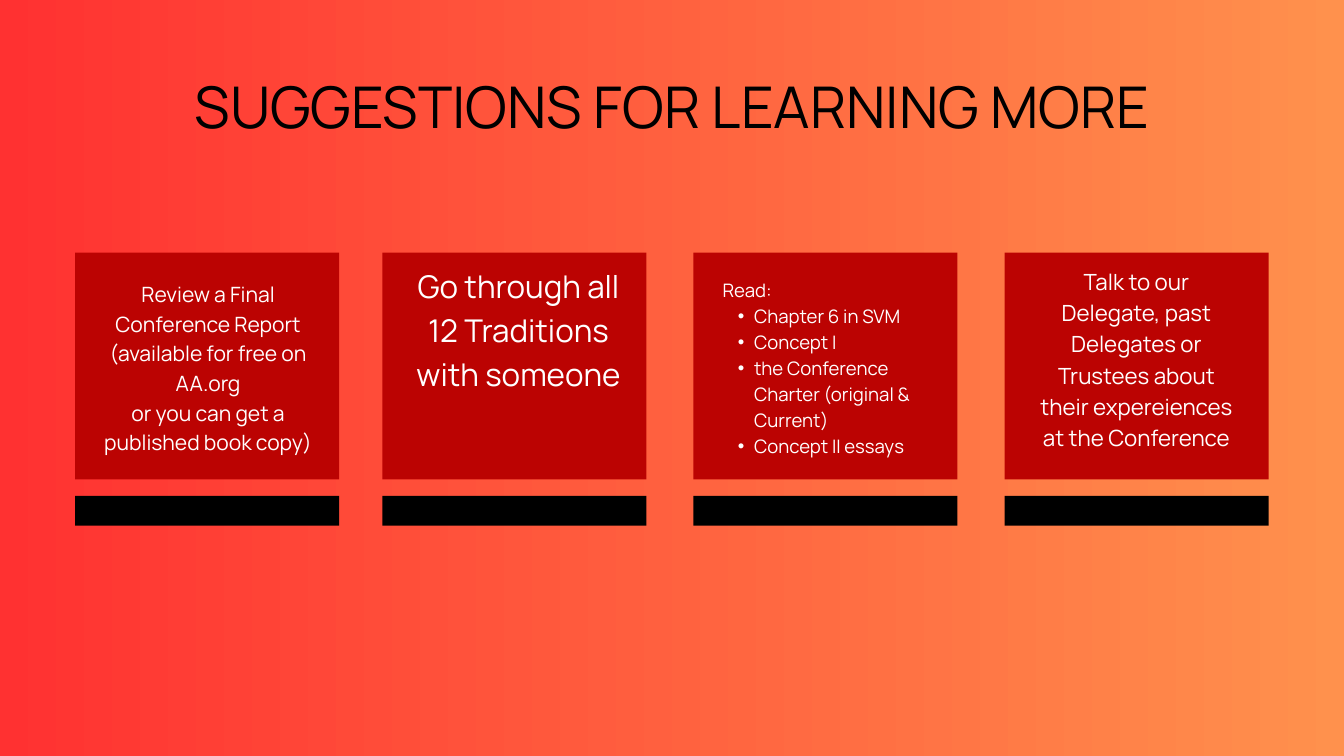
from pptx import Presentation
from pptx.dml.color import RGBColor
from pptx.enum.shapes import MSO_SHAPE as Shape
from pptx.enum.text import MSO_ANCHOR as Anchor, MSO_AUTO_SIZE as AutoSize, PP_ALIGN as Align
from pptx.oxml.ns import qn
from pptx.util import Cm, Pt
from lxml import etree


def color(hex_string):
    return RGBColor.from_string(hex_string)


def write(shape, lines, size, spacing, hex_string, align=Align.CENTER):
    frame = shape.text_frame
    frame.text = "\n".join(lines)
    frame.word_wrap = True
    frame.auto_size = AutoSize.NONE
    frame.vertical_anchor = Anchor.TOP
    frame.margin_left = frame.margin_right = frame.margin_top = frame.margin_bottom = 0
    for paragraph in frame.paragraphs:
        paragraph.alignment = align
        paragraph.line_spacing = Pt(spacing)
        paragraph.space_before = Pt(0)
        paragraph.font.name = "Manrope"
        paragraph.font.size = Pt(size)
        paragraph.font.color.rgb = color(hex_string)


presentation = Presentation()
presentation.slide_width = Cm(50.8)
presentation.slide_height = Cm(28.58)
slide = presentation.slides.add_slide(presentation.slide_layouts[1])
title, reading_list = slide.placeholders

# Background, red to orange from left to right
background = slide.background.fill
background.gradient()
background.gradient_angle = 0
for stop, hex_string in zip(background.gradient_stops, ("FF3131", "FF914D")):
    stop.color.rgb = color(hex_string)

# Title
title.left, title.top, title.width, title.height = Cm(7.34), Cm(2.69), Cm(36.12), Cm(5.33)
write(title, ["SUGGESTIONS FOR LEARNING MORE"], 61.6, 73.9, "000000")

# Red cards, each with a black bar below
for left in (2.84, 14.45, 26.21, 37.97):
    for top, height, hex_string in ((9.55, 8.57, "BB0302"), (18.75, 1.12, "000000")):
        panel = slide.shapes.add_shape(Shape.RECTANGLE, Cm(left), Cm(top), Cm(9.98), Cm(height))
        panel.shadow.inherit = False
        panel.fill.solid()
        panel.fill.fore_color.rgb = color(hex_string)
        panel.line.fill.background()

# Centred card texts: left, top, width, height, size, line spacing, lines
card_texts = [
    (3.61, 10.49, 8.51, 7.8, 22.6, 31.7,
     ["Review a Final Conference Report (available for free on AA.org",
      "or you can get a published book copy)"]),
    (15.37, 9.86, 8.46, 8.26, 33.6, 47,
     ["Go through all 12 Traditions with someone"]),
    (39.07, 9.96, 7.77, 8.15, 23.9, 33.5,
     ["Talk to our Delegate, past Delegates or Trustees about "
      "their expereiences at the Conference"]),
]
for left, top, width, height, size, spacing, lines in card_texts:
    box = slide.shapes.add_textbox(Cm(left), Cm(top), Cm(width), Cm(height))
    write(box, lines, size, spacing, "FFFFFF")

# Reading list, brought in front of its card
reading_list.left, reading_list.top = Cm(27.31), Cm(10.41)
reading_list.width, reading_list.height = Cm(7.77), Cm(6.86)
reading_lines = [
    "Read:",
    "Chapter 6 in SVM",
    "Concept I",
    "the Conference Charter (original & Current)",
    "Concept II essays",
]
write(reading_list, reading_lines, 19.9, 27.9, "FFFFFF", Align.LEFT)
slide.shapes._spTree.append(reading_list._element)

# Bullets for every line after the heading
heading, *items = reading_list.text_frame.paragraphs
for paragraph in (heading, *items):
    is_item = paragraph is not heading
    paragraph.level = int(is_item)
    properties = paragraph._p.get_or_add_pPr()
    properties.set("marL", str(Cm(1.19) if is_item else 0))
    properties.set("indent", str(Cm(-0.61) if is_item else 0))
    bullet = etree.Element(qn("a:buChar" if is_item else "a:buNone"))
    if is_item:
        bullet.set("char", "•")
    properties.find(qn("a:defRPr")).addprevious(bullet)

presentation.save("out.pptx")
